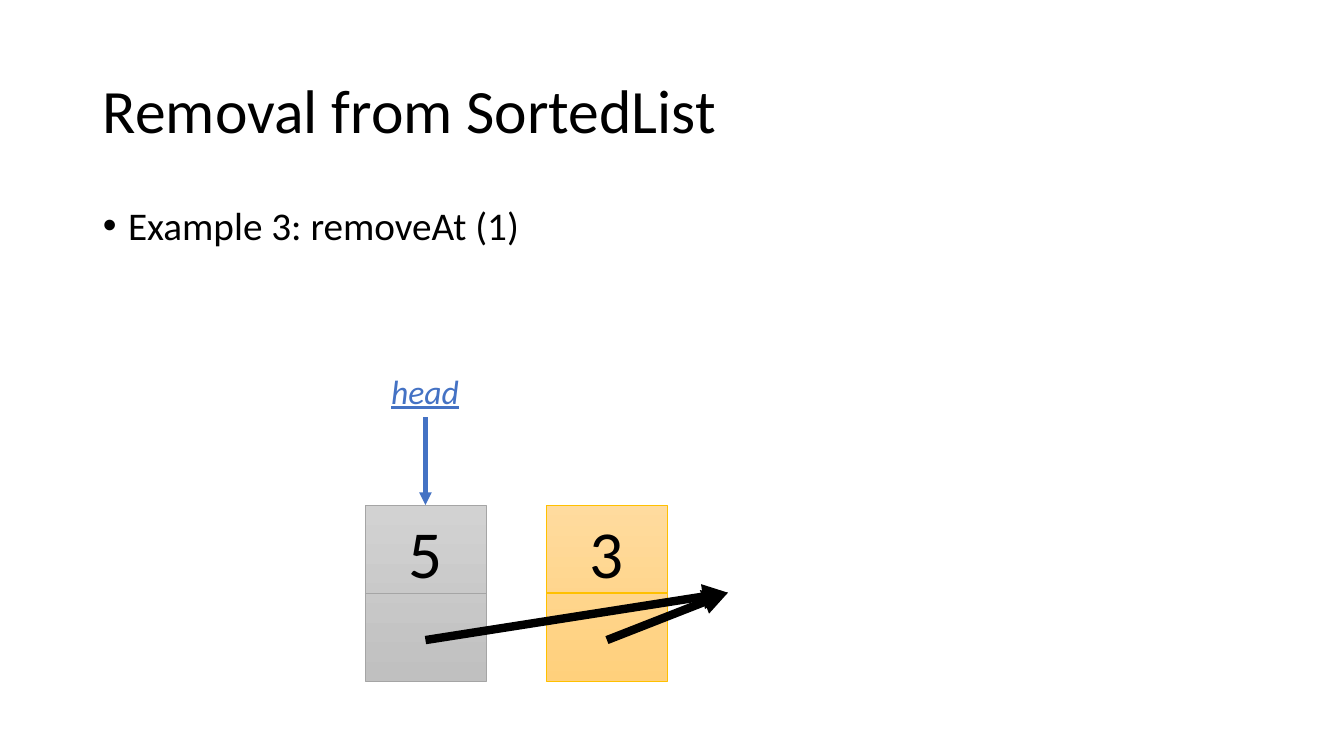
from dataclasses import dataclass

from lxml.etree import SubElement
from pptx import Presentation
from pptx.dml.color import RGBColor as RGB
from pptx.enum.shapes import MSO_CONNECTOR as LINK, MSO_SHAPE as SHAPE
from pptx.enum.text import MSO_ANCHOR as ANCHOR, MSO_AUTO_SIZE as FIT, PP_ALIGN as ALIGN
from pptx.oxml.ns import qn
from pptx.util import Inches, Pt


@dataclass(frozen=True)
class Theme:
    font: str = "Calibri"
    ink: str = "000000"
    pointer: str = "4472C4"
    gray: tuple = ("D2D2D2", "C0C0C0", "A5A5A5")    # top, bottom, outline
    gold: tuple = ("FFDB9E", "FFD07C", "FFC000")
    title: int = 44
    bullet: int = 28
    value: int = 48
    label: int = 24


NODE_W, NODE_H, NODE_TOP = 1.2, 1.75, 5.01


def apply(target, formats):
    for key, value in formats.items():
        setattr(target, key, value)


def place(shape, left, top, width, height):
    apply(shape, {"left": Inches(left), "top": Inches(top),
                  "width": Inches(width), "height": Inches(height)})


class ListSlide:
    def __init__(self, slide, theme):
        self.slide, self.theme = slide, theme

    def set_text(self, shape, text, size, color=None, frame=None, paragraph=None, font=None):
        text_frame = shape.text_frame
        text_frame.text = text
        apply(text_frame, {"word_wrap": True, "auto_size": FIT.NONE, **(frame or {})})
        line = text_frame.paragraphs[0]
        apply(line, paragraph or {})
        run_font = line.runs[0].font
        apply(run_font, {"name": self.theme.font, "size": Pt(size), **(font or {})})
        run_font.color.rgb = RGB.from_string(color or self.theme.ink)

    def title(self, text):
        heading = self.slide.shapes.title
        place(heading, 0.92, 0.4, 11.5, 1.45)
        self.set_text(heading, text, self.theme.title,
                      frame={"vertical_anchor": ANCHOR.MIDDLE},
                      paragraph={"alignment": ALIGN.LEFT, "line_spacing": 0.9})

    def bullet(self, text):
        body = self.slide.placeholders[1]
        place(body, 0.92, 2, 11.5, 4.76)
        self.set_text(body, text, self.theme.bullet,
                      paragraph={"line_spacing": 0.9, "space_before": Pt(10)})
        properties = body.text_frame.paragraphs[0]._p.get_or_add_pPr()
        properties.set("marL", str(Inches(0.25)))
        properties.set("indent", str(Inches(-0.25)))
        SubElement(properties, qn("a:buFont")).set("typeface", "Arial")
        SubElement(properties, qn("a:buChar")).set("char", "•")

    def label(self, text, left, top, width, height):
        box = self.slide.shapes.add_textbox(*map(Inches, (left, top, width, height)))
        self.set_text(box, text, self.theme.label, self.theme.pointer,
                      frame={"word_wrap": False},
                      font={"italic": True, "underline": True})
        return box

    def line(self, start, end, color, width, arrow=False):
        link = self.slide.shapes.add_connector(
            LINK.STRAIGHT, *map(Inches, (*start, *end)))
        link.line.color.rgb = RGB.from_string(color)
        link.line.width = Pt(width)
        if arrow:
            SubElement(link.line._ln, qn("a:tailEnd")).set("type", "triangle")
        SubElement(link._element.spPr, qn("a:effectLst"))
        return link

    def node(self, value, left, colors, divider_width):
        top_color, bottom_color, outline = colors
        cell = self.slide.shapes.add_shape(
            SHAPE.RECTANGLE, *map(Inches, (left, NODE_TOP, NODE_W, NODE_H)))
        cell.shadow.inherit = False
        cell.fill.gradient()
        cell.fill.gradient_angle = 270
        for stop, color in zip(cell.fill.gradient_stops, (top_color, bottom_color)):
            stop.color.rgb = RGB.from_string(color)
        cell.line.color.rgb = RGB.from_string(outline)
        cell.line.width = Pt(0.5)
        self.set_text(cell, value, self.theme.value,
                      frame={"vertical_anchor": ANCHOR.TOP, "margin_top": Inches(0.06)},
                      paragraph={"alignment": ALIGN.CENTER})
        middle = NODE_TOP + NODE_H / 2
        self.line((left, middle), (left + NODE_W, middle), outline, divider_width)
        return cell


def main():
    deck = Presentation()
    deck.slide_width, deck.slide_height = Inches(13.33), Inches(7.5)
    theme = Theme()
    page = ListSlide(deck.slides.add_slide(deck.slide_layouts[1]), theme)

    # Heading and example
    page.title("Removal from SortedList")
    page.bullet("Example 3: removeAt (1)")

    # List nodes
    first_left, removed_left = 3.62, 5.42
    page.node("3", removed_left, theme.gold, 1)
    first_node = page.node("5", first_left, theme.gray, 0.5)

    # Head pointer
    head = page.label("head", 3.78, 3.63, 0.88, 0.51)
    head_arrow = page.line((4.22, 4.14), (4.22, NODE_TOP), theme.pointer, 3, arrow=True)
    head_arrow.begin_connect(head, 2)
    head_arrow.end_connect(first_node, 0)

    # Next pointers, both leading past the removed node
    for left in (removed_left, first_left):
        page.line((left + NODE_W / 2, 6.35), (7.22, 5.88), theme.ink, 6, arrow=True)

    deck.save("out.pptx")


if __name__ == "__main__":
    main()
